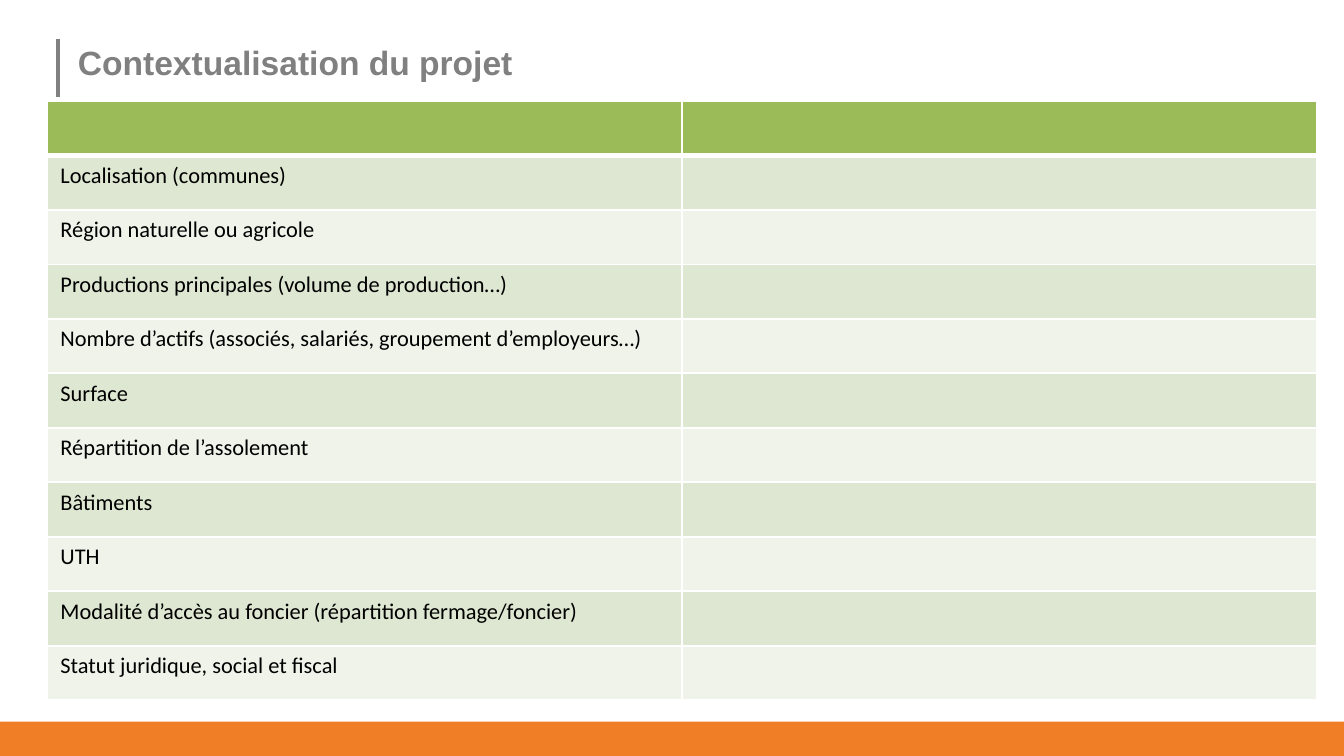
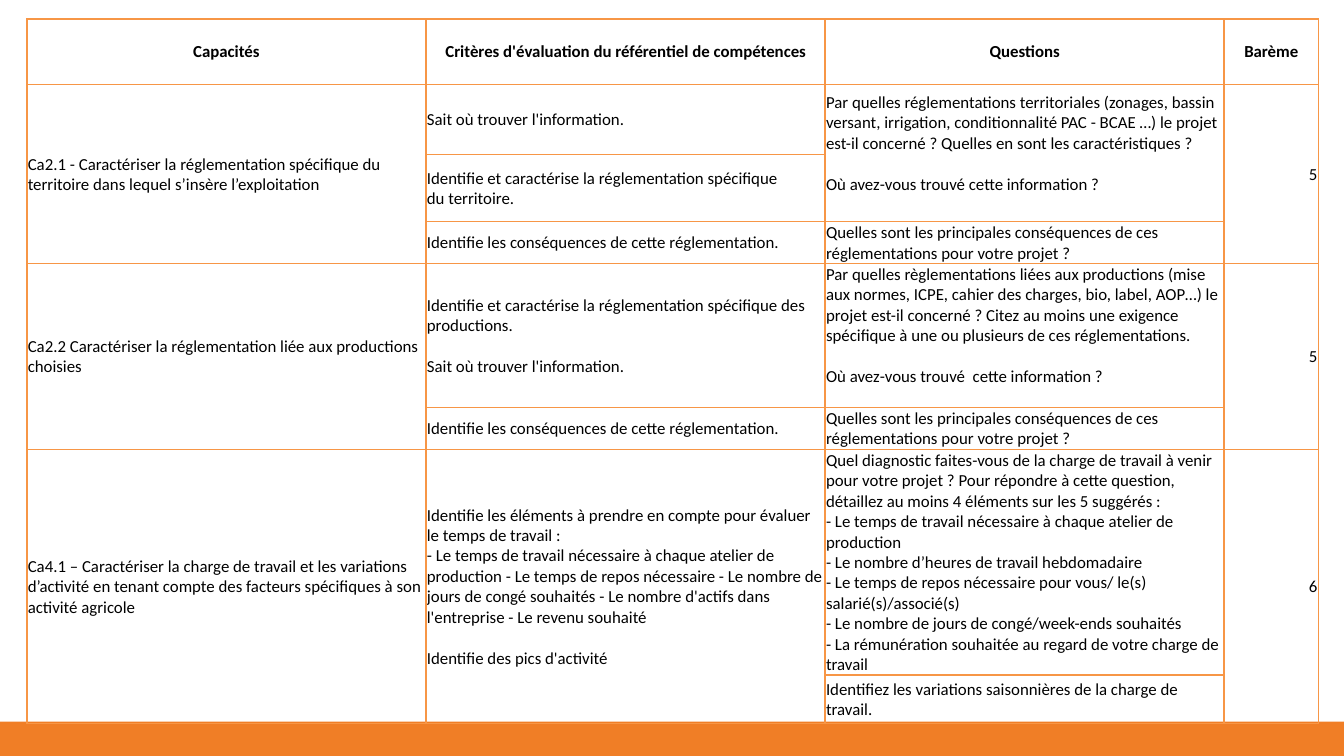
from lxml import etree
from pptx import Presentation
from pptx.dml.color import RGBColor
from pptx.enum import shapes, text
from pptx.oxml.ns import qn
from pptx.util import Inches, Pt

# Shared style
ORANGE = RGBColor(0xF0, 0x7E, 0x26)
BORDER_ORANGE = RGBColor(0xF7, 0x96, 0x46)
GREEN = RGBColor(0x9B, 0xBB, 0x59)
BANDS = RGBColor(0xDE, 0xE7, 0xD1), RGBColor(0xEF, 0xF3, 0xEA)
GREY = RGBColor(0x80, 0x80, 0x80)
WHITE = RGBColor(0xFF, 0xFF, 0xFF)
BLACK = RGBColor(0, 0, 0)
LEFT, CENTER, RIGHT = text.PP_ALIGN.LEFT, text.PP_ALIGN.CENTER, text.PP_ALIGN.RIGHT
LINE_GAP = Pt(11)  # height of one line of 9 pt text
TITLE_ONLY, BLANK = 5, 6

# Slide 1 content
TITLE = "Contextualisation du projet"
CONTEXT = [
    "Localisation (communes)",
    "Région naturelle ou agricole",
    "Productions principales (volume de production…)",
    "Nombre d’actifs (associés, salariés, groupement d’employeurs…)",
    "Surface",
    "Répartition de l’assolement",
    "Bâtiments",
    "UTH",
    "Modalité d’accès au foncier (répartition fermage/foncier)",
    "Statut juridique, social et fiscal",
]

# Slide 2 content: None continues the cell above
HEADINGS = ["Capacités", "Critères d'évaluation du référentiel de compétences",
            "Questions", "Barème"]
CONSEQUENCES = "Identifie les conséquences de cette réglementation."
ASK_CONSEQUENCES = ("Quelles sont les principales conséquences de ces "
                    "réglementations pour votre projet ?")
GRID = [
    HEADINGS,
    ["Ca2.1 - Caractériser la réglementation spécifique du territoire dans lequel "
     "s’insère l’exploitation",
     "Sait où trouver l'information.",
     "Par quelles réglementations territoriales (zonages, bassin versant, irrigation, "
     "conditionnalité PAC - BCAE …) le projet est-il concerné ? Quelles en sont les "
     "caractéristiques ?\n\nOù avez-vous trouvé cette information ?",
     "5"],
    [None, "Identifie et caractérise la réglementation spécifique\ndu territoire.",
     None, None],
    [None, CONSEQUENCES, ASK_CONSEQUENCES, None],
    ["Ca2.2 Caractériser la réglementation liée aux productions choisies",
     "Identifie et caractérise la réglementation spécifique des\nproductions.\n\n"
     "Sait où trouver l'information.",
     "Par quelles règlementations liées aux productions (mise aux normes, ICPE, cahier "
     "des charges, bio, label, AOP…) le projet est-il concerné ? Citez au moins une "
     "exigence spécifique à une ou plusieurs de ces réglementations.\n\n"
     "Où avez-vous trouvé  cette information ?",
     "5"],
    [None, CONSEQUENCES, ASK_CONSEQUENCES, None],
    ["Ca4.1 – Caractériser la charge de travail et les variations d’activité en tenant "
     "compte des facteurs spécifiques à son activité agricole",
     "Identifie les éléments à prendre en compte pour évaluer le temps de travail :\n"
     "- Le temps de travail nécessaire à chaque atelier de production - Le temps de "
     "repos nécessaire - Le nombre de jours de congé souhaités - Le nombre d'actifs "
     "dans l'entreprise - Le revenu souhaité\n\nIdentifie des pics d'activité",
     "Quel diagnostic faites-vous de la charge de travail à venir pour votre projet ? "
     "Pour répondre à cette question, détaillez au moins 4 éléments sur les 5 "
     "suggérés :\n"
     "- Le temps de travail nécessaire à chaque atelier de production\n"
     "- Le nombre d’heures de travail hebdomadaire\n"
     "- Le temps de repos nécessaire pour vous/ le(s) salarié(s)/associé(s)\n"
     "- Le nombre de jours de congé/week-ends souhaités\n"
     "- La rémunération souhaitée au regard de votre charge de travail",
     "6"],
    [None, None, "Identifiez les variations saisonnières de la charge de travail.", None],
]
GRID_COLUMNS = [2.97, 2.97, 2.97, 0.7]
GRID_ROWS = [0.49, 0.52, 0.5, 0.28, 0.95, 0.28, 1.66, 0.36]


def write(frame, words, size=12, font="Calibri", color=BLACK, bold=False, align=LEFT):
    """A blank line starts a spaced paragraph; a single newline breaks the line."""
    frame.word_wrap = True
    for number, block in enumerate(words.split("\n\n")):
        para = frame.add_paragraph() if number else frame.paragraphs[0]
        para.alignment = align
        if number:
            para.space_before = LINE_GAP
        for index, line in enumerate(block.split("\n")):
            if index:
                para.add_line_break()
            span = para.add_run()
            span.text = line
            span.font.size, span.font.name = Pt(size), font
            span.font.bold, span.font.color.rgb = bold, color


def set_borders(cell, color, top=1, bottom=1):
    properties = cell._tc.get_or_add_tcPr()
    for side, width in (("L", 1), ("R", 1), ("T", top), ("B", bottom)):
        line = etree.SubElement(properties, qn(f"a:ln{side}"), w=str(Pt(width)))
        fill = etree.SubElement(line, qn("a:solidFill"))
        etree.SubElement(fill, qn("a:srgbClr"), val=str(color))


def add_plain_table(page, left, top, columns, rows):
    frame = page.shapes.add_table(len(rows), len(columns), Inches(left), Inches(top),
                                  Inches(sum(columns)), Inches(sum(rows)))
    table = frame.table
    table.first_row = table.horz_banding = False
    for column, width in zip(table.columns, columns):
        column.width = Inches(width)
    for row, height in zip(table.rows, rows):
        row.height = Inches(height)
    return table


def add_page(deck, layout):
    """Page with the orange band at its foot."""
    page = deck.slides.add_slide(deck.slide_layouts[layout])
    band = page.shapes.add_shape(shapes.MSO_SHAPE.RECTANGLE, Inches(-0.04), Inches(5.37),
                                 Inches(10.04), Inches(0.26))
    band.shadow.inherit = False
    band.fill.solid()
    band.fill.fore_color.rgb = ORANGE
    band.line.fill.background()
    return page


def add_title(page, words):
    title = page.shapes.title
    title.left, title.top = Inches(0.48), Inches(0.26)
    title.width, title.height = Inches(8.07), Inches(0.4)
    frame = title.text_frame
    frame.vertical_anchor = text.MSO_ANCHOR.TOP
    frame.auto_size = text.MSO_AUTO_SIZE.NONE
    write(frame, words, size=18, font="Arial", color=GREY, bold=True)
    rule = page.shapes.add_connector(shapes.MSO_CONNECTOR.STRAIGHT, Inches(0.43),
                                     Inches(0.29), Inches(0.43), Inches(0.72))
    rule.line.color.rgb, rule.line.width = GREY, Pt(2.25)
    etree.SubElement(rule._element.spPr, qn("a:effectLst"))


def build_context(deck):
    page = add_page(deck, TITLE_ONLY)
    add_title(page, TITLE)
    count = len(CONTEXT) + 1
    table = add_plain_table(page, 0.35, 0.75, [9.45 / 2] * 2, [4.46 / count] * count)
    for r, label in enumerate([""] + CONTEXT):
        for cell in table.rows[r].cells:
            set_borders(cell, WHITE, top=3 if r == 1 else 1, bottom=1 if r else 3)
            cell.fill.solid()
            cell.fill.fore_color.rgb = BANDS[(r - 1) % 2] if r else GREEN
        if label:
            write(table.cell(r, 0).text_frame, label)


def build_grid(deck):
    page = add_page(deck, BLANK)
    table = add_plain_table(page, 0.2, 0.14, GRID_COLUMNS, GRID_ROWS)
    for r, row in enumerate(GRID):
        for c, words in enumerate(row):
            cell = table.cell(r, c)
            set_borders(cell, BORDER_ORANGE)
            cell.fill.background()
            if words is None:
                continue
            cell.vertical_anchor = text.MSO_ANCHOR.MIDDLE
            cell.margin_left = cell.margin_right = cell.margin_top = Pt(0.5)
            # Questions in two parts keep one free line below
            two_parts = c == 2 and "\n\n" in words
            cell.margin_bottom = LINE_GAP if two_parts else 0
            align = CENTER if r == 0 else RIGHT if c == 3 else LEFT
            write(cell.text_frame, words, size=9, bold=r == 0, align=align)
            # Merge with the continued cells below
            last = r
            while last + 1 < len(GRID) and GRID[last + 1][c] is None:
                last += 1
            if last > r:
                cell.merge(table.cell(last, c))


def main():
    deck = Presentation()
    deck.slide_width = Inches(10)
    deck.slide_height = deck.slide_width * 9 // 16
    build_context(deck)
    build_grid(deck)
    deck.save("out.pptx")


if __name__ == "__main__":
    main()
